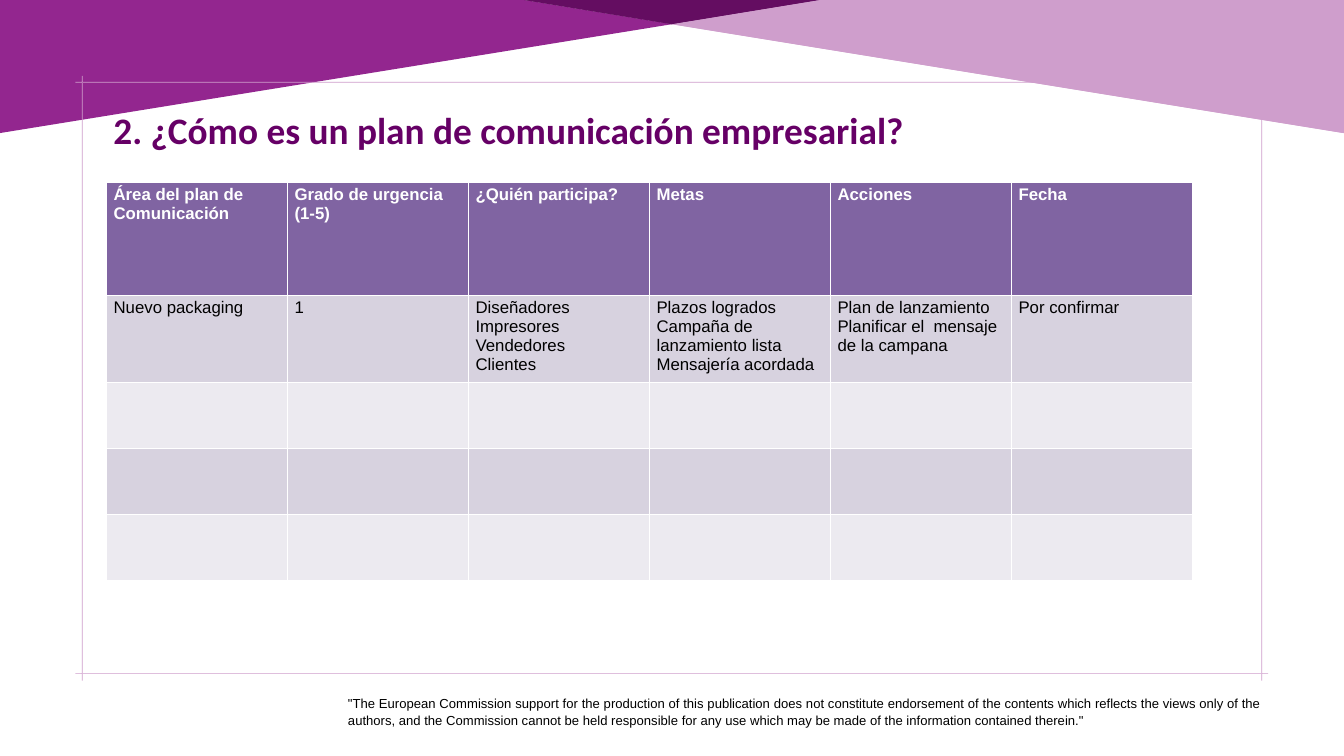
from pptx import Presentation
from pptx.dml.color import RGBColor
from pptx.enum.text import MSO_AUTO_SIZE, PP_ALIGN
from pptx.util import Inches, Pt

COLORS = {
    "purple": "93268F", "lilac": "CF9ECC", "plum": "640D61", "title": "660066",
    "header": "8064A2", "band": "D7D2DF", "pale": "ECEAF0",
    "white": "FFFFFF", "black": "000000",
}
HEADINGS = ["Área del plan de Comunicación", "Grado de urgencia (1-5)",
            "¿Quién participa?", "Metas", "Acciones", "Fecha"]
PACKAGING = [
    "Nuevo packaging",
    "1",
    "Diseñadores\nImpresores\nVendedores\nClientes",
    "Plazos logrados\nCampaña de lanzamiento lista\nMensajería acordada",
    "Plan de lanzamiento\nPlanificar el  mensaje de la campana",
    "Por confirmar",
]
DISCLAIMER = (
    '"The European Commission support for the production of this publication does not '
    "constitute endorsement of the contents which reflects the views only of the authors, "
    "and the Commission cannot be held responsible for any use which may be made of the "
    'information contained therein."'
)


class SlideBuilder:
    """Holds the style and the current slide, and adds each kind of element."""

    def __init__(self, slide, font="Arial"):
        self.slide = slide
        self.font = font

    def color(self, name):
        return RGBColor.from_string(COLORS[name])

    def add_run(self, paragraph, text, size, color, bold=False, font=None):
        run = paragraph.add_run()
        run.text = text
        run.font.name = font or self.font
        run.font.size = Pt(size)
        run.font.bold = bold
        run.font.color.rgb = self.color(color)

    def outline(self, contours, color):
        contours = [[(Inches(x), Inches(y)) for x, y in contour] for contour in contours]
        builder = self.slide.shapes.build_freeform(*contours[0][0])
        for index, (start, *others) in enumerate(contours):
            if index:
                builder.move_to(*start)
            builder.add_line_segments(others, close=True)
        shape = builder.convert_to_shape()
        shape.shadow.inherit = False
        shape.fill.solid()
        shape.fill.fore_color.rgb = self.color(color)
        shape.line.fill.background()

    def text(self, box, text, size, color, bold=False, font=None, align=None, spacing=None):
        frame = self.slide.shapes.add_textbox(*map(Inches, box)).text_frame
        frame.word_wrap = True
        frame.auto_size = MSO_AUTO_SIZE.SHAPE_TO_FIT_TEXT
        paragraph = frame.paragraphs[0]
        paragraph.alignment = align
        paragraph.line_spacing = spacing
        self.add_run(paragraph, text, size, color, bold, font)

    def table(self, box, rows, heights, size):
        table = self.slide.shapes.add_table(len(rows), len(rows[0]), *map(Inches, box)).table
        for r, (texts, height) in enumerate(zip(rows, heights)):
            table.rows[r].height = Inches(height)
            fill = "header" if r == 0 else "band" if r % 2 else "pale"
            for c, text in enumerate(texts):
                cell = table.cell(r, c)
                cell.fill.solid()
                cell.fill.fore_color.rgb = self.color(fill)
                frame = cell.text_frame
                for i, line in enumerate(text.splitlines()):
                    paragraph = frame.add_paragraph() if i else frame.paragraphs[0]
                    self.add_run(paragraph, line, size, "black" if r else "white", bold=r == 0)


def bar(left, top, right, bottom):
    """Return the corners of an upright rectangle."""
    return [(left, top), (right, top), (right, bottom), (left, bottom)]


def main():
    deck = Presentation()
    deck.slide_width, deck.slide_height = Inches(20), Inches(11.25)
    page = SlideBuilder(deck.slides.add_slide(deck.slide_layouts[6]))

    page.outline([[(0, 1.98), (0, 0), (7.8, 0), (10, 0.36)]], "purple")
    for shift in (0, 0.01):
        tip, edge, right = 10 - shift, 12.2 - shift, 20 - shift
        page.outline([[(right, 1.98), (tip, 0.36), (edge, 0), (right, 0)]], "lilac")
        page.outline([[(tip, 0.36), (7.8, 0), (edge, 0)]], "plum")

    rules = [bar(1.12, y, 18.87, y + 0.01) for y in (1.22, 10.02)]
    rules += [bar(x, 1.13, x + 0.01, 10.13) for x in (1.22, 18.77)]
    page.outline(rules, "lilac")

    page.text((5.08, 10.29, 13.79, 0.52), DISCLAIMER, 14, "black",
              align=PP_ALIGN.JUSTIFY, spacing=1.07)
    page.text((1.59, 1.54, 13.5, 0.77), "2. ¿Cómo es un plan de comunicación empresarial?",
              40, "title", bold=True, font="Calibri")
    blank_rows = [[""] * len(HEADINGS)] * 3
    page.table((1.59, 2.71, 16.16, 5.6), [HEADINGS, PACKAGING, *blank_rows],
               [1.68] + [0.98] * 4, 18)
    deck.save("out.pptx")


if __name__ == "__main__":
    main()
